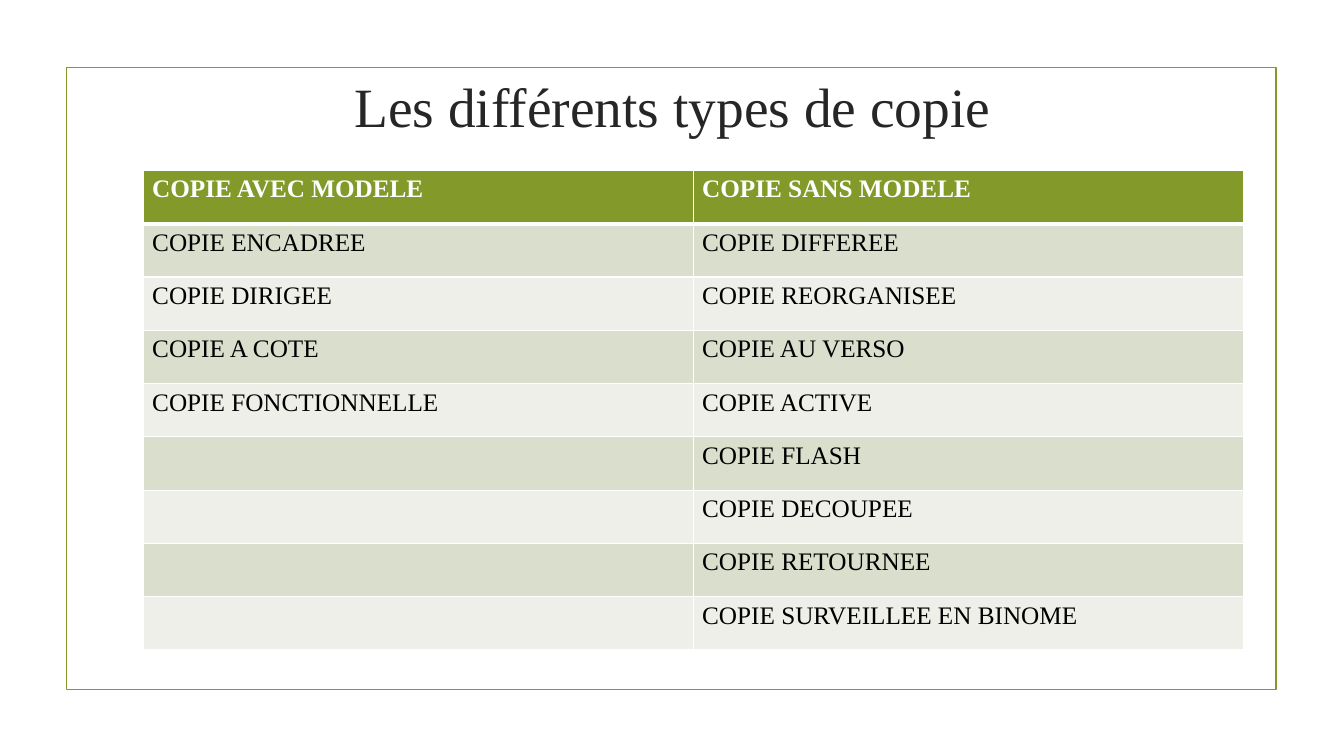
from dataclasses import dataclass

from lxml import etree
from pptx import Presentation
from pptx import util as u
from pptx.dml.color import RGBColor
from pptx.enum import shapes, text
from pptx.oxml import ns

COLORS = {
    "green": "83992A",
    "title": "262626",
    "white": "FFFFFF",
    "black": "000000",
    "band_dark": "D9DECD",
    "band_light": "EDEFE8",
}
FONT = "Times New Roman"
THIN, THICK = 1, 3


@dataclass
class TextStyle:
    size: float
    color: str
    bold: bool = False


@dataclass
class CopyRow:
    with_model: str
    without_model: str


ROWS = [
    CopyRow("COPIE AVEC MODELE", "COPIE SANS MODELE"),
    CopyRow("COPIE ENCADREE", "COPIE DIFFEREE"),
    CopyRow("COPIE DIRIGEE", "COPIE REORGANISEE"),
    CopyRow("COPIE A COTE", "COPIE AU VERSO"),
    CopyRow("COPIE FONCTIONNELLE", "COPIE ACTIVE"),
    CopyRow("", "COPIE FLASH"),
    CopyRow("", "COPIE DECOUPEE"),
    CopyRow("", "COPIE RETOURNEE"),
    CopyRow("", "COPIE SURVEILLEE EN BINOME"),
]


def rgb(name: str) -> RGBColor:
    return RGBColor.from_string(COLORS[name])


def add_run(paragraph, content: str, style: TextStyle) -> None:
    run = paragraph.add_run()
    run.text = content
    run.font.name = FONT
    run.font.size = u.Pt(style.size)
    run.font.bold = style.bold
    run.font.color.rgb = rgb(style.color)


def add_frame(slide) -> None:
    frame = slide.shapes.add_shape(
        shapes.MSO_SHAPE.RECTANGLE,
        u.Inches(0.66), u.Inches(0.67), u.Inches(12), u.Inches(6.17))
    frame.shadow.inherit = False
    frame.fill.background()
    frame.line.color.rgb = rgb("green")
    frame.line.width = u.Pt(1.25)


def add_title(slide, content: str) -> None:
    box = slide.shapes.add_textbox(
        u.Inches(1.42), u.Inches(0.68), u.Inches(10.5), u.Inches(0.74))
    text_frame = box.text_frame
    text_frame.word_wrap = True
    text_frame.vertical_anchor = text.MSO_ANCHOR.MIDDLE
    paragraph = text_frame.paragraphs[0]
    paragraph.alignment = text.PP_ALIGN.CENTER
    add_run(paragraph, content, TextStyle(39.6, "title"))


def set_borders(cell, top: float, bottom: float) -> None:
    properties = cell._tc.get_or_add_tcPr()
    widths = {"lnL": THIN, "lnR": THIN, "lnT": top, "lnB": bottom}
    for tag, width in widths.items():
        line = etree.SubElement(properties, ns.qn(f"a:{tag}"), w=str(u.Pt(width)))
        fill = etree.SubElement(line, ns.qn("a:solidFill"))
        etree.SubElement(fill, ns.qn("a:srgbClr"), val=COLORS["white"])


def add_copy_table(slide, rows: list[CopyRow]) -> None:
    table = slide.shapes.add_table(
        len(rows), 2,
        u.Inches(1.42), u.Inches(1.69), u.Inches(10.91), u.Inches(4.76)).table
    table.horz_banding = False
    for index, row in enumerate(rows):
        # Header row in green, then alternating bands
        if index == 0:
            fill, style = "green", TextStyle(18, "white", True)
        else:
            fill = "band_dark" if index % 2 else "band_light"
            style = TextStyle(18, "black")
        for column, content in enumerate((row.with_model, row.without_model)):
            cell = table.cell(index, column)
            set_borders(cell, top=THICK if index == 1 else THIN,
                        bottom=THICK if index == 0 else THIN)
            cell.fill.solid()
            cell.fill.fore_color.rgb = rgb(fill)
            cell.margin_left = cell.margin_right = u.Inches(0.09)
            cell.margin_top = cell.margin_bottom = u.Inches(0.05)
            if content:
                add_run(cell.text_frame.paragraphs[0], content, style)


def main() -> None:
    presentation = Presentation()
    presentation.slide_width = u.Inches(13.33)
    presentation.slide_height = u.Inches(7.5)
    slide = presentation.slides.add_slide(presentation.slide_layouts[6])
    add_frame(slide)
    add_title(slide, "Les différents types de copie")
    add_copy_table(slide, ROWS)
    presentation.save("out.pptx")


if __name__ == "__main__":
    main()
